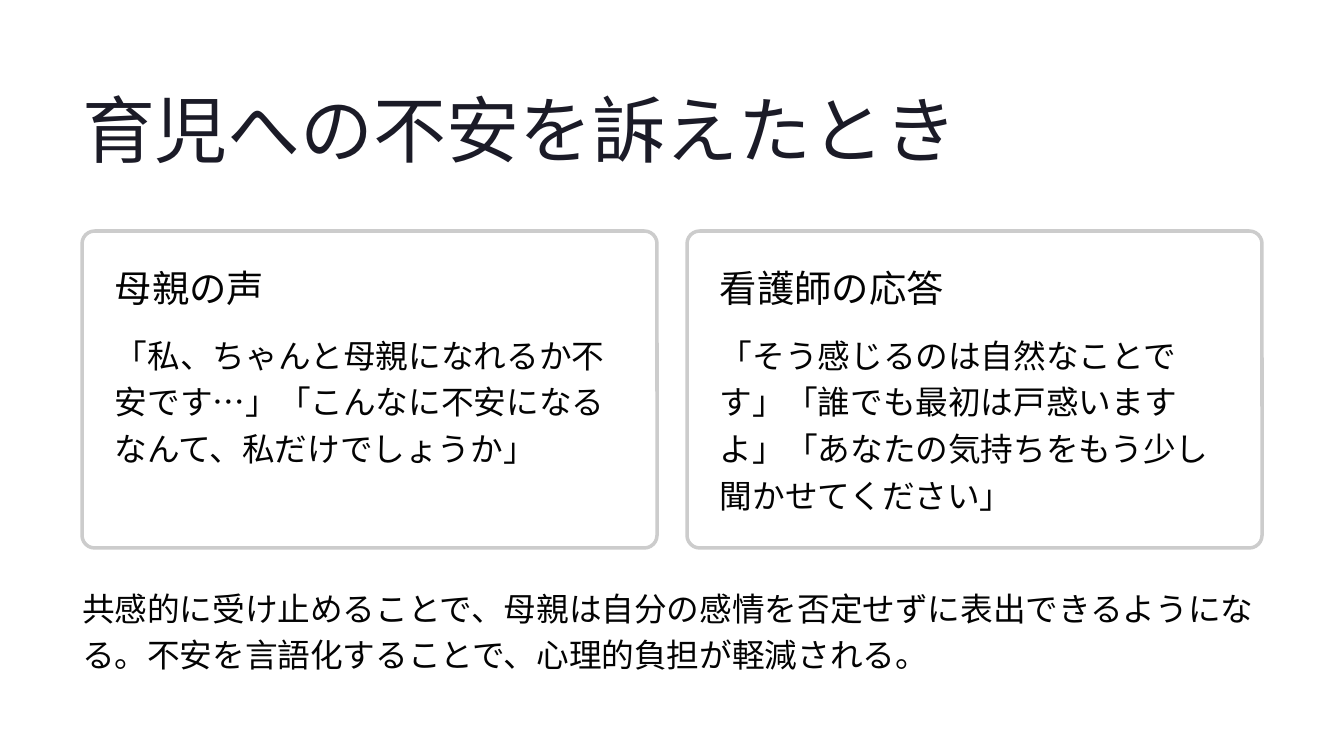
from lxml.etree import SubElement
from pptx import Presentation
from pptx.dml.color import RGBColor
from pptx.enum.shapes import MSO_SHAPE
from pptx.oxml.ns import qn
from pptx.util import Emu, Pt

PX_PER_INCH = 84
WHITE = RGBColor(0xFF, 0xFF, 0xFF)
BORDER = RGBColor(0xCC, 0xCC, 0xCC)
NAVY = RGBColor(0x1B, 0x1B, 0x27)
INK = RGBColor(0x03, 0x03, 0x03)

MARGIN = 82
CARD_TOP = 231
CARD_PITCH = 605
PADDING = 33

CARDS = [
    ("母親の声",
     "「私、ちゃんと母親になれるか不安です…」「こんなに不安になるなんて、私だけでしょうか」", 141),
    ("看護師の応答",
     "「そう感じるのは自然なことです」「誰でも最初は戸惑いますよ」"
     "「あなたの気持ちをもう少し聞かせてください」", 187),
]
SUMMARY = ("共感的に受け止めることで、母親は自分の感情を否定せずに表出できるようになる。"
           "不安を言語化することで、心理的負担が軽減される。")


def px(*lengths):
    return [Emu(round(length * 914400 / PX_PER_INCH)) for length in lengths]


class SlideBuilder:
    heading_font = "Inter"
    body_font = "Karla"

    def __init__(self, deck):
        self.page = deck.slides.add_slide(deck.slide_layouts[6])
        fill = self.page.background.fill
        fill.solid()
        fill.fore_color.rgb = WHITE

    def text(self, area, words, font_name, size, spacing, color=INK, wrap=False):
        frame = self.page.shapes.add_textbox(*px(*area)).text_frame
        frame.margin_left = frame.margin_right = 0
        frame.margin_top = frame.margin_bottom = 0
        frame.word_wrap = wrap
        para = frame.paragraphs[0]
        para.text = words
        para.line_spacing = Pt(spacing)
        para.font.name = font_name
        para.font.size = Pt(size)
        para.font.color.rgb = color

    def heading(self, area, words, size, spacing, color=INK):
        self.text(area, words, self.heading_font, size, spacing, color)

    def body(self, area, words):
        self.text(area, words, self.body_font, 28, 40, wrap=True)

    def panel(self, area):
        """Draw a rounded card with a slightly see-through white fill."""
        box = self.page.shapes.add_shape(MSO_SHAPE.ROUNDED_RECTANGLE, *px(*area))
        box.adjustments[0] = 0.04
        box.shadow.inherit = False
        box.fill.solid()
        box.fill.fore_color.rgb = WHITE
        fill_color = box.fill._xPr.find(qn("a:solidFill"))[0]
        SubElement(fill_color, qn("a:alpha"), val="95000")
        box.line.color.rgb = BORDER
        box.line.width = Pt(3)

    def card(self, left, title, words, words_height):
        self.panel((left, CARD_TOP, 575, 317))
        inner = left + PADDING
        self.heading((inner, CARD_TOP + PADDING, 367, 46), title, 32, 39)
        self.body((inner, CARD_TOP + 97, 510, words_height), words)


def main():
    deck = Presentation()
    deck.slide_width, deck.slide_height = px(16 * PX_PER_INCH, 9 * PX_PER_INCH)
    slide = SlideBuilder(deck)
    slide.heading((MARGIN, 81, 879, 92), "育児への不安を訴えたとき", 62.5, 78.5, NAVY)
    for index, (title, words, words_height) in enumerate(CARDS):
        slide.card(MARGIN + index * CARD_PITCH, title, words, words_height)
    slide.body((MARGIN, 581, 1180, 94), SUMMARY)
    deck.save("out.pptx")


if __name__ == "__main__":
    main()
